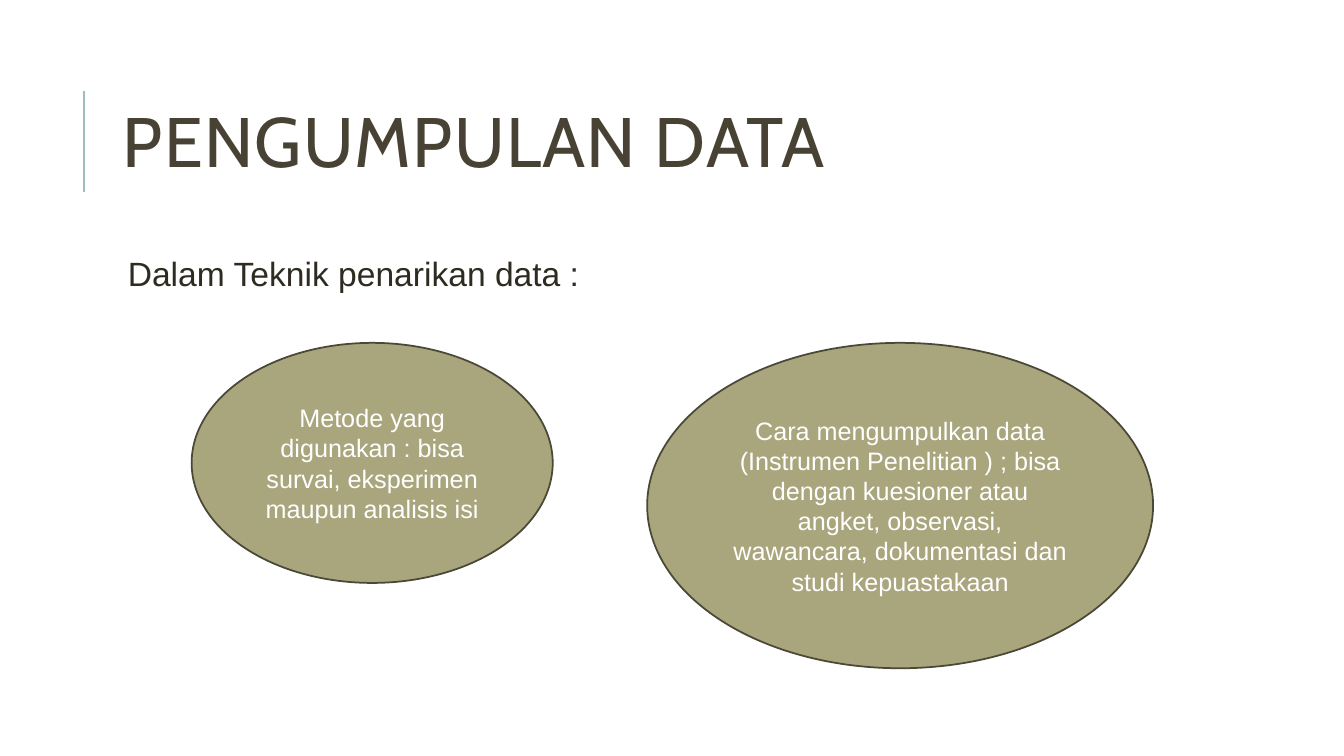
from dataclasses import dataclass

from pptx import Presentation
from pptx.dml.color import RGBColor
from pptx.enum.shapes import MSO_CONNECTOR as Connector, MSO_SHAPE as Shape
from pptx.enum.text import MSO_ANCHOR as Anchor, MSO_AUTO_SIZE as AutoSize, PP_ALIGN as Align
from pptx.oxml.ns import qn
from pptx.util import Cm, Pt


@dataclass(frozen=True)
class Theme:
    title_font: str = "Cabin"
    text_font: str = "Arial"
    title_size: int = 50
    body_size: int = 24
    oval_size: int = 18
    title_color: str = "474233"
    body_color: str = "2E2B21"
    oval_text: str = "FFFFFF"
    oval_fill: str = "A9A57C"
    oval_line: str = "4A4836"
    accent: str = "9CBEBD"


def apply(target, formats):
    for attribute, value in formats.items():
        setattr(target, attribute, value)


class SlideBuilder:
    def __init__(self, slide, theme):
        self.slide = slide
        self.theme = theme

    def set_text(self, shape, text, font, size, color, frame_format, paragraph_format):
        frame = shape.text_frame
        apply(frame, {"word_wrap": True, "auto_size": AutoSize.NONE, **frame_format})
        paragraph = frame.paragraphs[0]
        apply(paragraph, paragraph_format)
        run = paragraph.add_run()
        run.text = text
        apply(run.font, {"name": font, "size": Pt(size)})
        run.font.color.rgb = RGBColor.from_string(color)
        return paragraph, run

    def place(self, shape, left, top, width, height):
        apply(shape, {"left": Cm(left), "top": Cm(top),
                      "width": Cm(width), "height": Cm(height)})

    def outline(self, line, color, width):
        line.color.rgb = RGBColor.from_string(color)
        line.width = Pt(width)

    def title(self, text, *box):
        heading = self.slide.shapes.title
        self.place(heading, *box)
        _, run = self.set_text(
            heading, text, self.theme.title_font, self.theme.title_size, self.theme.title_color,
            {"vertical_anchor": Anchor.MIDDLE},
            {"alignment": Align.LEFT, "line_spacing": 0.8})
        run.font._element.set("spc", "100")

    def body(self, text, *box):
        intro = self.slide.placeholders[1]
        self.place(intro, *box)
        sides = ("left", "top", "right", "bottom")
        paragraph, _ = self.set_text(
            intro, text, self.theme.text_font, self.theme.body_size, self.theme.body_color,
            {"vertical_anchor": Anchor.TOP, **{f"margin_{side}": Cm(0.13) for side in sides}},
            {"alignment": Align.JUSTIFY, "line_spacing": 0.9,
             "space_before": Pt(12), "space_after": Pt(2)})
        # Plain indented line without a bullet
        properties = paragraph._p.get_or_add_pPr()
        properties.set("marL", str(Cm(0.25)))
        properties.set("indent", "0")
        properties.append(properties.makeelement(qn("a:buNone"), {}))

    def rule(self, x, top, bottom):
        rule = self.slide.shapes.add_connector(
            Connector.STRAIGHT, Cm(x), Cm(bottom), Cm(x), Cm(top))
        self.outline(rule.line, self.theme.accent, 1.5)
        properties = rule._element.spPr
        properties.append(properties.makeelement(qn("a:effectLst"), {}))

    def oval(self, text, *box):
        oval = self.slide.shapes.add_shape(Shape.OVAL, *map(Cm, box))
        oval.shadow.inherit = False
        oval.fill.solid()
        oval.fill.fore_color.rgb = RGBColor.from_string(self.theme.oval_fill)
        self.outline(oval.line, self.theme.oval_line, 1.25)
        self.set_text(oval, text, self.theme.text_font, self.theme.oval_size,
                      self.theme.oval_text,
                      {"vertical_anchor": Anchor.MIDDLE}, {"alignment": Align.CENTER})


def main():
    deck = Presentation()
    apply(deck, {"slide_width": Cm(33.87), "slide_height": Cm(19.05)})
    builder = SlideBuilder(deck.slides.add_slide(deck.slide_layouts[1]), Theme())

    # Heading with its accent rule
    builder.rule(2.12, 2.3, 4.85)
    builder.title("PENGUMPULAN DATA", 2.84, 1.63, 27, 4.17)

    # Introduction
    builder.body("Dalam Teknik penarikan data :", 2.84, 6.35, 27, 11.18)

    # Method and instrument, aligned at the top
    ovals_top = 8.64
    builder.oval("Metode yang digunakan : bisa survai, eksperimen maupun analisis isi",
                 4.83, ovals_top, 9.1, 6.05)
    builder.oval("Cara mengumpulkan data (Instrumen Penelitian ) ; bisa dengan kuesioner atau "
                 "angket, observasi, wawancara, dokumentasi dan studi kepuastakaan",
                 16.31, ovals_top, 12.75, 8.2)

    deck.save("out.pptx")


if __name__ == "__main__":
    main()
